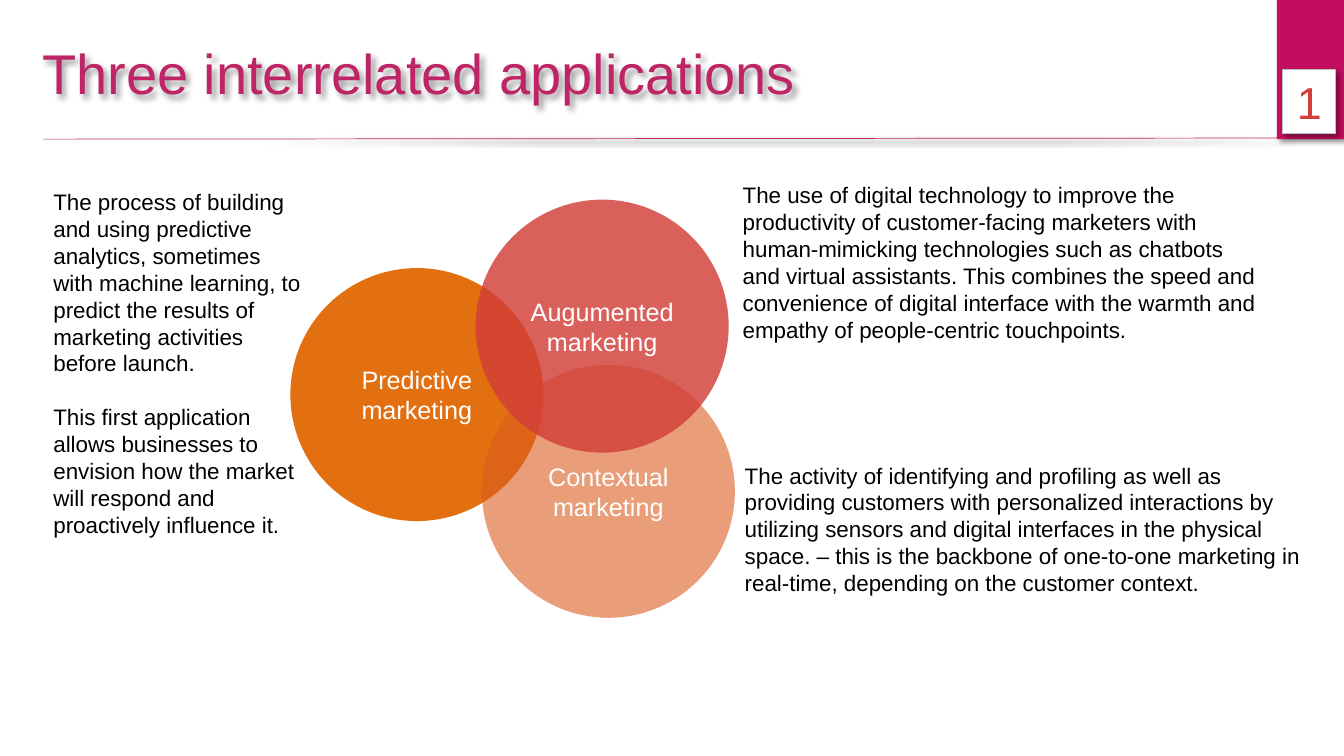
"""Build a slide on three interrelated marketing applications."""
from dataclasses import dataclass

from lxml import etree
from pptx import Presentation
from pptx.dml import color
from pptx.enum import shapes, text
from pptx.oxml import ns
from pptx.util import Pt

COLOURS = {
    "bar": "C30E60", "title": "BE2566", "red": "D23E38", "orange": "E26F10",
    "rust": "DB5C1E", "white": "FFFFFF", "black": "000000", "border": "BFBFBF",
}
FONT = "Arial"
CIRCLE_SIZE = 180.7


@dataclass(frozen=True)
class Box:
    left: float
    top: float
    width: float
    height: float

    def lengths(self) -> tuple:
        """Return the four lengths in points."""
        return Pt(self.left), Pt(self.top), Pt(self.width), Pt(self.height)


@dataclass(frozen=True)
class Circle:
    label: str
    left: float
    top: float
    colour: str
    opacity: int = 100


@dataclass(frozen=True)
class Description:
    box: Box
    paragraphs: tuple[str, ...]


CIRCLES = (
    Circle("Predictive marketing", 207.4, 191.5, "orange"),
    Circle("Contextual marketing", 344.2, 260.6, "rust", 60),
    Circle("Augumented marketing", 339.8, 142.6, "red", 82),
)
DESCRIPTIONS = (
    Description(Box(31, 131, 190.8, 317.5), (
        "The process of building and using predictive analytics, sometimes with machine "
        "learning, to predict the results of marketing activities before launch.",
        "This first application allows businesses to envision how the market will respond "
        "and proactively influence it.",
    )),
    Description(Box(523.4, 126, 388.1, 143.3), (
        "The use of digital technology to improve the productivity of customer-facing "
        "marketers with human-mimicking technologies such as chatbots and virtual "
        "assistants. This combines the speed and convenience of digital interface with "
        "the warmth and empathy of people-centric touchpoints.",
    )),
    Description(Box(524.9, 326.2, 414.7, 123.8), (
        "The activity of identifying and profiling as well as providing customers with "
        "personalized interactions by utilizing sensors and digital interfaces in the "
        "physical space. – this is the backbone of one-to-one marketing in real-time, "
        "depending on the customer context.",
    )),
)


def rgb(name: str) -> color.RGBColor:
    """Return a named colour."""
    return color.RGBColor.from_string(COLOURS[name])


def add_shadow(shape) -> None:
    """Give a shape a soft shadow to its lower right."""
    effects = etree.SubElement(shape._element.spPr, ns.qn("a:effectLst"))
    shadow = etree.SubElement(
        effects, ns.qn("a:outerShdw"), blurRad=str(Pt(4)), dist=str(Pt(3)),
        dir=str(45 * 60000), algn="tl", rotWithShape="0")
    shade = etree.SubElement(shadow, ns.qn("a:srgbClr"), val=COLOURS["black"])
    etree.SubElement(shade, ns.qn("a:alpha"), val="40000")


def write(shape, *paragraphs: str, size: float, colour: str, align=text.PP_ALIGN.LEFT,
          anchor=text.MSO_ANCHOR.TOP, inset: float | None = None, gap: float = 0) -> None:
    """Fill a shape with formatted paragraphs."""
    frame = shape.text_frame
    frame.word_wrap = True
    frame.auto_size = text.MSO_AUTO_SIZE.NONE
    frame.vertical_anchor = anchor
    if inset is not None:
        frame.margin_left = frame.margin_right = Pt(inset)
        frame.margin_top = frame.margin_bottom = Pt(inset)
    for index, content in enumerate(paragraphs):
        paragraph = frame.add_paragraph() if index else frame.paragraphs[0]
        paragraph.alignment = align
        paragraph.space_before = Pt(gap if index else 0)
        run = paragraph.add_run()
        run.text = content
        run.font.name, run.font.size = FONT, Pt(size)
        run.font.color.rgb = rgb(colour)


def add_filled(slide, kind, box: Box, fill: str, opacity: int = 100,
               border: str | None = None):
    """Add a filled preset shape."""
    shape = slide.shapes.add_shape(kind, *box.lengths())
    shape.fill.solid()
    shape.fill.fore_color.rgb = rgb(fill)
    if opacity < 100:
        shade = shape._element.spPr.find(ns.qn("a:solidFill"))[0]
        etree.SubElement(shade, ns.qn("a:alpha"), val=str(opacity * 1000))
    if border:
        shape.line.color.rgb = rgb(border)
        shape.line.width = Pt(0.75)
    else:
        shape.line.fill.background()
    return shape


def add_header(slide) -> None:
    """Add the title, its rule and the page number."""
    rectangle = shapes.MSO_SHAPE.RECTANGLE
    bar = add_filled(slide, rectangle, Box(912, 0, 48, 99.4), "bar")
    badge = add_filled(slide, rectangle, Box(916.2, 49.7, 38, 46), "white", border="border")
    write(badge, "1", size=32, colour="red", align=text.PP_ALIGN.CENTER,
          anchor=text.MSO_ANCHOR.MIDDLE, inset=0)
    rule = slide.shapes.add_connector(
        shapes.MSO_CONNECTOR.STRAIGHT, Pt(31), Pt(99.4), Pt(919.4), Pt(98.6))
    rule.line.color.rgb = rgb("title")
    rule.line.width = Pt(0.5)
    title = slide.shapes.title
    title.left, title.top, title.width, title.height = Box(23, 23.8, 883.4, 55.4).lengths()
    write(title, "Three interrelated applications", size=40, colour="title",
          anchor=text.MSO_ANCHOR.MIDDLE)
    for shape in (bar, badge, rule, title):
        add_shadow(shape)


def add_circle(slide, circle: Circle) -> None:
    """Add one labelled circle of the overlapping group."""
    box = Box(circle.left, circle.top, CIRCLE_SIZE, CIRCLE_SIZE)
    shape = add_filled(slide, shapes.MSO_SHAPE.OVAL, box, circle.colour, circle.opacity)
    shape.shadow.inherit = False
    write(shape, circle.label, size=18, colour="white", align=text.PP_ALIGN.CENTER,
          anchor=text.MSO_ANCHOR.MIDDLE, inset=0)


def add_description(slide, description: Description) -> None:
    """Add the explanatory text beside a circle."""
    shape = slide.shapes.add_textbox(*description.box.lengths())
    write(shape, *description.paragraphs, size=16, colour="black", gap=19.2)


def main() -> None:
    """Build and save the presentation."""
    presentation = Presentation()
    presentation.slide_width, presentation.slide_height = Pt(960), Pt(540)
    slide = presentation.slides.add_slide(presentation.slide_layouts[5])
    add_header(slide)
    for circle in CIRCLES:
        add_circle(slide, circle)
    for description in DESCRIPTIONS:
        add_description(slide, description)
    presentation.save("out.pptx")


if __name__ == "__main__":
    main()
